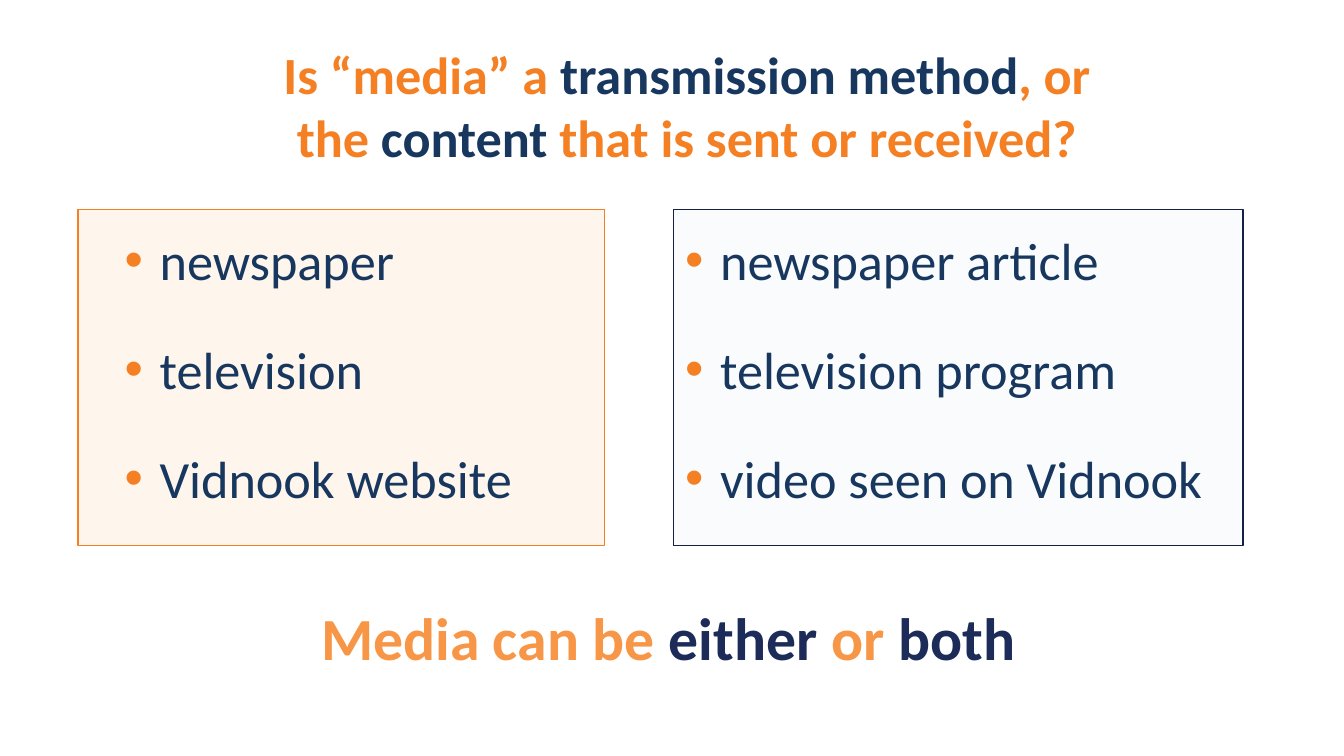
"""Build a slide asking whether media means a transmission method or its content."""
from dataclasses import dataclass

import lxml.etree
import pptx
import pptx.dml.color
import pptx.enum.shapes
import pptx.enum.text
import pptx.oxml.ns
import pptx.util
from pptx.util import Inches

FONT = "Calibri"
COLORS = {
    "orange": "F58024",
    "navy": "17375E",
    "soft_orange": "F79646",
    "deep_navy": "1C2B58",
    "pale_blue": "C3CDEC",
    "midnight": "152042",
}
PANEL_TOP, PANEL_HEIGHT = 1.56, 2.5
LIST_TOP, LIST_HEIGHT = 1.65, 2.3
HANGING = 0.26
FILL_OPACITY = 8


@dataclass(frozen=True)
class Panel:
    """A tinted box and the bulleted examples on it."""

    left: float
    width: float
    list_left: float
    list_width: float
    fill: str
    border: str
    examples: tuple[str, ...]


PANELS = (
    Panel(0.58, 3.92, 0.83, 3.83, "orange", "orange",
          ("newspaper", "television", "Vidnook website")),
    Panel(5.01, 4.24, 5, 4.25, "pale_blue", "midnight",
          ("newspaper article", "television program", "video seen on Vidnook")),
)
QUESTION = (
    ("Is “media” a ", "orange"),
    ("transmission method", "navy"),
    (", or the ", "orange"),
    ("content", "navy"),
    (" that is sent or received?", "orange"),
)
ANSWER = (
    ("Media can be ", "soft_orange"),
    ("either", "deep_navy"),
    (" or ", "soft_orange"),
    ("both", "deep_navy"),
)


def rgb(name: str) -> pptx.dml.color.RGBColor:
    """Look up a named colour."""
    return pptx.dml.color.RGBColor.from_string(COLORS[name])


def add_element(parent, tag: str, **attributes: str):
    """Append a DrawingML element to its parent."""
    return lxml.etree.SubElement(parent, pptx.oxml.ns.qn(tag), attributes)


def write_headline(paragraph, parts: tuple[tuple[str, str], ...], size: int) -> None:
    """Write bold text in alternating colours."""
    paragraph.font.name = FONT
    paragraph.font.size = pptx.util.Pt(size)
    paragraph.font.bold = True
    for text, color in parts:
        run = paragraph.add_run()
        run.text = text
        run.font.color.rgb = rgb(color)


def write_bullet(paragraph, text: str) -> None:
    """Write one example with an orange bullet and a hanging indent."""
    properties = paragraph._p.get_or_add_pPr()
    properties.set("marL", str(Inches(HANGING)))
    properties.set("indent", str(-Inches(HANGING)))
    bullet_color = add_element(properties, "a:buClr")
    add_element(bullet_color, "a:srgbClr", val=COLORS["orange"])
    add_element(properties, "a:buFont", typeface="Arial")
    add_element(properties, "a:buChar", char="•")
    paragraph.text = text
    paragraph.font.name = FONT
    paragraph.font.size = pptx.util.Pt(28)
    paragraph.font.color.rgb = rgb("navy")


def draw_panel(slide, panel: Panel) -> None:
    """Draw a tinted box with its list of examples."""
    box = slide.shapes.add_shape(
        pptx.enum.shapes.MSO_SHAPE.RECTANGLE,
        Inches(panel.left), Inches(PANEL_TOP), Inches(panel.width), Inches(PANEL_HEIGHT))
    box.shadow.inherit = False
    box.fill.solid()
    box.fill.fore_color.rgb = rgb(panel.fill)
    tint = box._element.spPr.find(".//" + pptx.oxml.ns.qn("a:srgbClr"))
    add_element(tint, "a:alpha", val=str(FILL_OPACITY * 1000))
    box.line.color.rgb = rgb(panel.border)
    box.line.width = pptx.util.Pt(0.75)

    examples = slide.shapes.add_textbox(
        Inches(panel.list_left), Inches(LIST_TOP),
        Inches(panel.list_width), Inches(LIST_HEIGHT)).text_frame
    examples.word_wrap = True
    for index, text in enumerate(panel.examples):
        paragraph = examples.add_paragraph() if index else examples.paragraphs[0]
        if index:
            paragraph.space_before = pptx.util.Pt(24.7)
        write_bullet(paragraph, text)


def draw_question(slide) -> None:
    """Place and write the title."""
    title = slide.shapes.title
    title.left, title.top = Inches(1.67), Inches(0.31)
    title.width, title.height = Inches(6.63), Inches(0.94)
    frame = title.text_frame
    frame.word_wrap = True
    frame.auto_size = pptx.enum.text.MSO_AUTO_SIZE.NONE
    frame.vertical_anchor = pptx.enum.text.MSO_ANCHOR.MIDDLE
    paragraph = frame.paragraphs[0]
    paragraph.alignment = pptx.enum.text.PP_ALIGN.CENTER
    paragraph._p.get_or_add_pPr().set("marL", str(Inches(0.25)))
    write_headline(paragraph, QUESTION, 28)


def draw_answer(slide) -> None:
    """Write the conclusion under the panels."""
    frame = slide.shapes.add_textbox(
        Inches(2.29), Inches(4.42), Inches(5.41), Inches(0.64)).text_frame
    frame.word_wrap = False
    frame.auto_size = pptx.enum.text.MSO_AUTO_SIZE.SHAPE_TO_FIT_TEXT
    write_headline(frame.paragraphs[0], ANSWER, 32)


def main() -> None:
    """Build and save the presentation."""
    presentation = pptx.Presentation()
    presentation.slide_width = Inches(10)
    presentation.slide_height = Inches(10 * 9 / 16)
    slide = presentation.slides.add_slide(presentation.slide_layouts[5])
    draw_question(slide)
    for panel in PANELS:
        draw_panel(slide, panel)
    draw_answer(slide)
    presentation.save("out.pptx")


if __name__ == "__main__":
    main()
